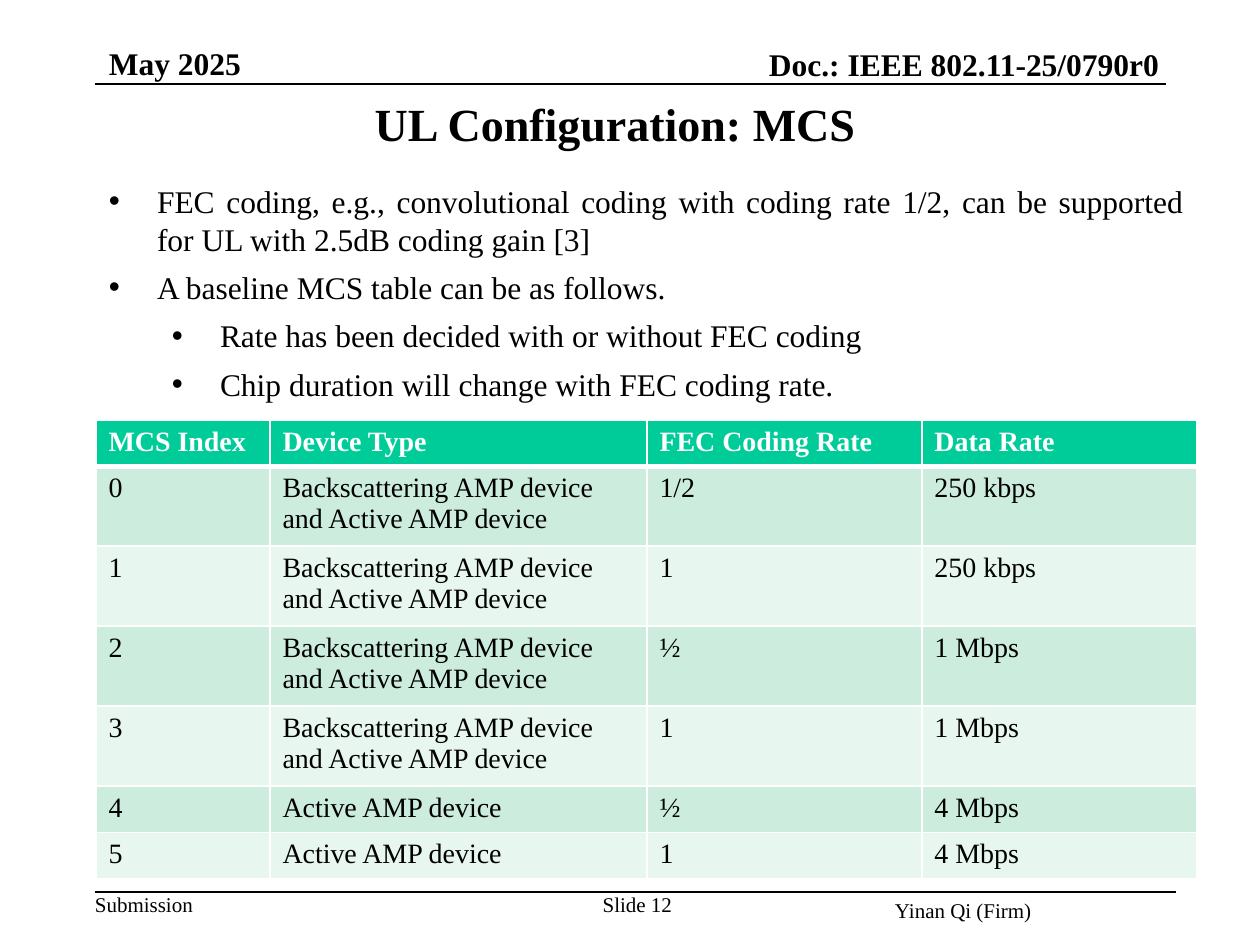
from dataclasses import dataclass

from lxml.etree import SubElement
from pptx import Presentation
from pptx.dml.color import RGBColor
from pptx.enum.shapes import MSO_CONNECTOR as Connector
from pptx.enum.text import MSO_ANCHOR as Anchor, MSO_AUTO_SIZE as AutoSize, PP_ALIGN as Align
from pptx.oxml.ns import qn
from pptx.util import Emu, Pt


@dataclass(frozen=True)
class Theme:
    font: str = "Times New Roman"
    ink: str = "000000"
    white: str = "FFFFFF"
    header_fill: str = "00CC99"
    bands: tuple = ("CCECDE", "E7F6EF")
    title: float = 26.3
    body: int = 18
    table: int = 16
    footer: int = 12


THEME = Theme()
EMU_PER_PX = 914400 / 126
BULLET_HANG = 48
DEFAULT_INSETS = (13, 6)

BULLETS = [
    (1, 48, "FEC coding, e.g., convolutional coding with coding rate 1/2, "
            "can be supported for UL with 2.5dB coding gain [3]"),
    (1, 48, "A baseline MCS table can be as follows."),
    (2, 111, "Rate has been decided with or without FEC coding"),
    (2, 111, "Chip duration will change with FEC coding rate."),
]

BOTH_DEVICES = "Backscattering AMP device and Active AMP device"
ACTIVE_DEVICE = "Active AMP device"
MCS_ROWS = [
    ("MCS Index", "Device Type", "FEC Coding Rate", "Data Rate"),
    ("0", BOTH_DEVICES, "1/2", "250 kbps"),
    ("1", BOTH_DEVICES, "1", "250 kbps"),
    ("2", BOTH_DEVICES, "½", "1 Mbps"),
    ("3", BOTH_DEVICES, "1", "1 Mbps"),
    ("4", ACTIVE_DEVICE, "½", "4 Mbps"),
    ("5", ACTIVE_DEVICE, "1", "4 Mbps"),
]
COLUMN_WIDTHS = (174, 377, 275, 275)
ONE_LINE_HEIGHT = 46
TWO_LINE_HEIGHT = 80


def px(length):
    return Emu(round(length * EMU_PER_PX))


def format_runs(paragraph, size, color=THEME.ink, bold=False):
    for run in paragraph.runs:
        run.font.name = THEME.font
        run.font.size = Pt(size)
        run.font.bold = bold
        run.font.color.rgb = RGBColor.from_string(color)


def add_text_box(slide, box, insets=DEFAULT_INSETS, wrap=True, grow=False):
    text_frame = slide.shapes.add_textbox(*map(px, box)).text_frame
    text_frame.word_wrap = wrap
    text_frame.auto_size = AutoSize.SHAPE_TO_FIT_TEXT if grow else AutoSize.NONE
    text_frame.margin_left = text_frame.margin_right = px(insets[0])
    text_frame.margin_top = text_frame.margin_bottom = px(insets[1])
    return text_frame


def add_label(slide, text, box, size, bold=False, align=Align.LEFT, **frame_options):
    text_frame = add_text_box(slide, box, **frame_options)
    text_frame.text = text
    paragraph = text_frame.paragraphs[0]
    paragraph.alignment = align
    format_runs(paragraph, size, bold=bold)
    return text_frame


def add_title(slide, text):
    text_frame = add_label(slide, text, (53, 95, 1124, 67), THEME.title,
                           bold=True, align=Align.CENTER, insets=(8, 4))
    text_frame.vertical_anchor = Anchor.MIDDLE
    text_frame.paragraphs[0].line_spacing = 0.8


def add_rule(slide, left, right, y):
    rule = slide.shapes.add_connector(Connector.STRAIGHT, px(left), px(y), px(right), px(y))
    rule.line.color.rgb = RGBColor.from_string(THEME.ink)
    rule.line.width = Pt(1)
    SubElement(rule._element.spPr, qn("a:effectLst"))


def add_bullets(slide, box):
    text_frame = add_text_box(slide, box, grow=True)
    for index, (level, indent, text) in enumerate(BULLETS):
        paragraph = text_frame.add_paragraph() if index else text_frame.paragraphs[0]
        paragraph.text = text
        properties = paragraph._p.get_or_add_pPr()
        properties.set("marL", str(px(indent)))
        properties.set("indent", str(px(-BULLET_HANG)))
        SubElement(properties, qn("a:buFont"), typeface="Arial")
        SubElement(properties, qn("a:buChar"), char="•")
        paragraph.level = level
        paragraph.alignment = Align.JUSTIFY
        paragraph.space_after = Pt(6)
        format_runs(paragraph, THEME.body)


def set_borders(cell, top=1, bottom=1):
    properties = cell._tc.get_or_add_tcPr()
    for side, width in (("L", 1), ("R", 1), ("T", top), ("B", bottom)):
        line = SubElement(properties, qn(f"a:ln{side}"), w=str(Pt(width)))
        fill = SubElement(line, qn("a:solidFill"))
        SubElement(fill, qn("a:srgbClr"), val=THEME.white)


def add_mcs_table(slide, left, top):
    heights = [TWO_LINE_HEIGHT if BOTH_DEVICES in row else ONE_LINE_HEIGHT for row in MCS_ROWS]
    table = slide.shapes.add_table(
        len(MCS_ROWS), len(COLUMN_WIDTHS),
        px(left), px(top), px(sum(COLUMN_WIDTHS)), px(sum(heights)),
    ).table
    for column, width in zip(table.columns, COLUMN_WIDTHS):
        column.width = px(width)
    for row_index, (row, height) in enumerate(zip(MCS_ROWS, heights)):
        table.rows[row_index].height = px(height)
        is_header = row_index == 0
        fill = THEME.header_fill if is_header else THEME.bands[(row_index - 1) % 2]
        for column_index, text in enumerate(row):
            cell = table.cell(row_index, column_index)
            cell.text = text
            format_runs(cell.text_frame.paragraphs[0], THEME.table,
                        THEME.white if is_header else THEME.ink, is_header)
            set_borders(cell, top=3 if row_index == 1 else 1, bottom=3 if is_header else 1)
            cell.fill.solid()
            cell.fill.fore_color.rgb = RGBColor.from_string(fill)


def main():
    presentation = Presentation()
    presentation.slide_width = px(1260)
    presentation.slide_height = px(945)
    slide = presentation.slides.add_slide(presentation.slide_layouts[6])

    add_rule(slide, 95, 1166, 84)
    add_label(slide, "Submission", (95, 892, 100, 25), THEME.footer,
              insets=(0, 0), wrap=False, grow=True)
    add_rule(slide, 95, 1176, 892)
    add_title(slide, "UL Configuration: MCS")
    add_bullets(slide, (96, 176, 1101, 276))
    add_label(slide, "Yinan Qi (Firm)", (882, 892, 295, 25), THEME.footer)
    add_label(slide, "Slide 12", (599, 892, 73, 25), THEME.footer,
              align=Align.RIGHT, insets=(0, 0), grow=True)
    add_label(slide, "Doc.: IEEE 802.11-25/0790r0", (756, 39, 431, 50), THEME.body,
              bold=True, grow=True)
    add_label(slide, "May 2025", (96, 38, 318, 45), THEME.body, bold=True)
    add_mcs_table(slide, 96, 420)

    presentation.save("out.pptx")


if __name__ == "__main__":
    main()
